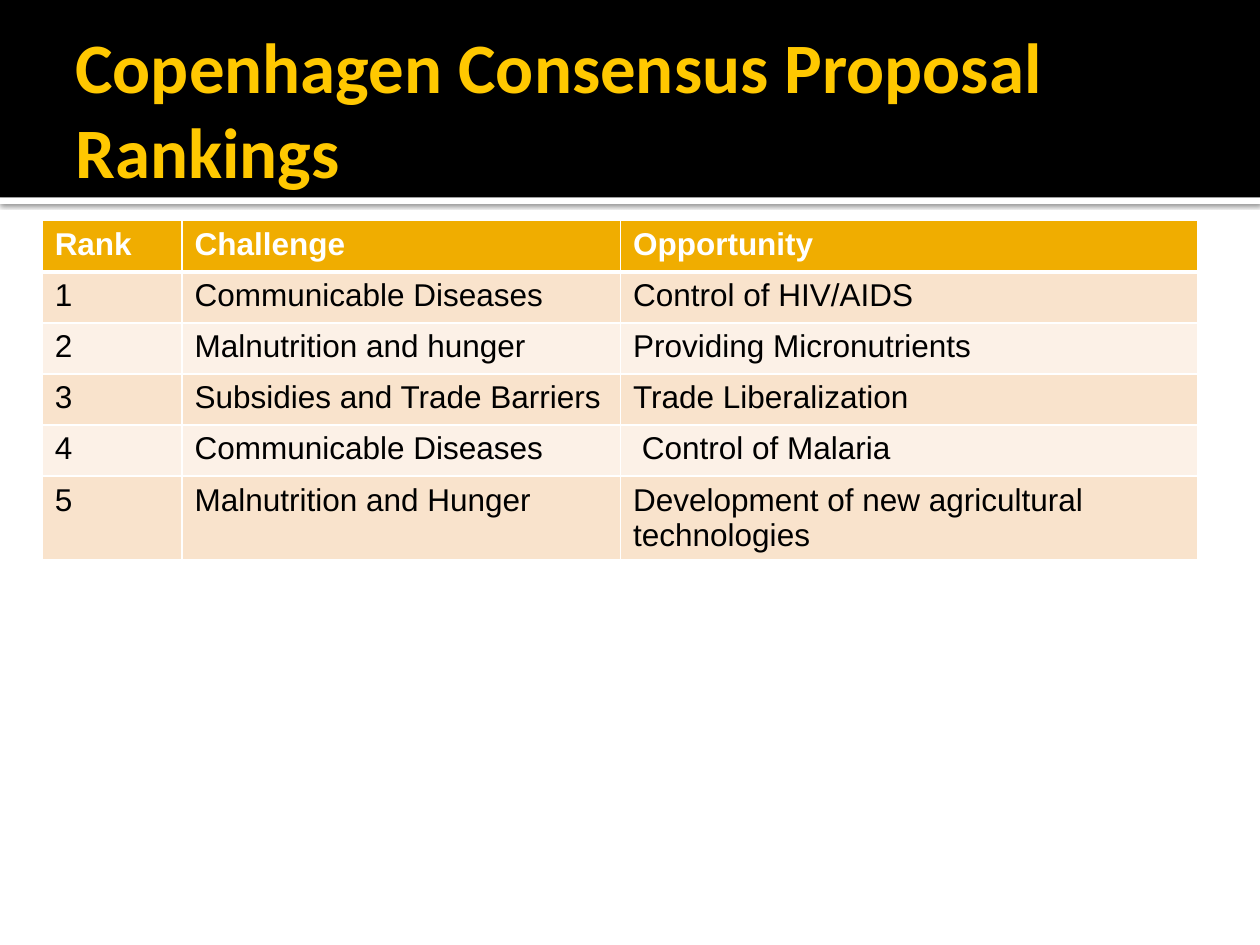
"""Build the slide of Copenhagen Consensus proposal rankings."""
from lxml import etree
from pptx import Presentation
from pptx.dml.color import RGBColor
from pptx.enum import shapes, text
from pptx.oxml import ns
from pptx.util import Cm, Pt

COLORS = {
    "white": "FFFFFF",
    "black": "000000",
    "title": "FFC800",
    "header": "F0AD00",
    "odd": "F9E3CC",
    "even": "FCF1E7",
}
COLUMN_WIDTHS = (2.82, 8.84, 11.63)
ROW_HEIGHT = 1.03
ROWS = (
    ("Rank", "Challenge", "Opportunity"),
    ("1", "Communicable Diseases", "Control of HIV/AIDS"),
    ("2", "Malnutrition and hunger", "Providing Micronutrients"),
    ("3", "Subsidies and Trade Barriers", "Trade Liberalization"),
    ("4", "Communicable Diseases", " Control of Malaria"),
    ("5", "Malnutrition and Hunger", "Development of new agricultural technologies"),
)


def color(name):
    """Return the named colour."""
    return RGBColor.from_string(COLORS[name])


def add_run(paragraph, words, font_name, size, color_name, bold):
    """Add one formatted run to a paragraph."""
    run = paragraph.add_run()
    run.text = words
    run.font.name = font_name
    run.font.size = Pt(size)
    run.font.bold = bold
    run.font.color.rgb = color(color_name)


def add_band(slide, top, height, color_name):
    """Add a full-width band behind the title."""
    shape = slide.shapes.add_shape(
        shapes.MSO_SHAPE.RECTANGLE, 0, Cm(top), Cm(25.4), Cm(height))
    shape.shadow.inherit = False
    shape.fill.solid()
    shape.fill.fore_color.rgb = color(color_name)
    shape.line.fill.background()
    slide.shapes.title.element.addprevious(shape.element)
    return shape


def add_shadow(shape):
    """Give a shape a soft shadow straight below it."""
    effects = shape.element.spPr.find(ns.qn("a:effectLst"))
    shadow = etree.SubElement(
        effects, ns.qn("a:outerShdw"), blurRad=str(Pt(2.5)), dist=str(Pt(0.8)),
        dir="5400000", algn="t", rotWithShape="0")
    tint = etree.SubElement(shadow, ns.qn("a:srgbClr"), val=COLORS["black"])
    etree.SubElement(tint, ns.qn("a:alpha"), val="60000")


def format_title(slide, words):
    """Place the title placeholder and fill in its text."""
    title = slide.shapes.title
    title.left, title.top, title.width, title.height = Cm(1.27), Cm(0.43), Cm(22.86), Cm(3.48)
    frame = title.text_frame
    frame.word_wrap = True
    frame.auto_size = text.MSO_AUTO_SIZE.NONE
    frame.vertical_anchor = text.MSO_ANCHOR.MIDDLE
    frame.margin_left = Cm(0.25)
    frame.margin_right = frame.margin_top = frame.margin_bottom = Cm(0.13)
    paragraph = frame.paragraphs[0]
    paragraph.alignment = text.PP_ALIGN.LEFT
    add_run(paragraph, words, "Calibri", 40.5, "title", True)


def set_borders(cell, widths):
    """Draw white borders of the given widths on the sides of a cell."""
    properties = cell._tc.get_or_add_tcPr()
    for position, (side, width) in enumerate(widths.items()):
        line = etree.Element(ns.qn(f"a:ln{side}"), w=str(Pt(width)))
        fill = etree.SubElement(line, ns.qn("a:solidFill"))
        etree.SubElement(fill, ns.qn("a:srgbClr"), val=COLORS["white"])
        properties.insert(position, line)


def add_rankings(slide):
    """Add the table of ranked proposals."""
    table = slide.shapes.add_table(
        len(ROWS), len(COLUMN_WIDTHS), Cm(0.85), Cm(4.45),
        Cm(sum(COLUMN_WIDTHS)), Cm(ROW_HEIGHT * len(ROWS))).table
    for column, width in zip(table.columns, COLUMN_WIDTHS):
        column.width = Cm(width)
    for index, values in enumerate(ROWS):
        table.rows[index].height = Cm(ROW_HEIGHT)
        header = index == 0
        fill_name = "header" if header else "odd" if index % 2 else "even"
        top = 3 if index == 1 else 1
        bottom = 3 if header else 1
        for cell, value in zip(table.rows[index].cells, values):
            cell.fill.solid()
            cell.fill.fore_color.rgb = color(fill_name)
            set_borders(cell, {"L": 1, "R": 1, "T": top, "B": bottom})
            add_run(cell.text_frame.paragraphs[0], value, "Arial", 18,
                    "white" if header else "black", header)


def main():
    """Build and save the presentation."""
    presentation = Presentation()
    presentation.slide_width, presentation.slide_height = Cm(25.4), Cm(19.05)
    slide = presentation.slides.add_slide(presentation.slide_layouts[5])
    add_shadow(add_band(slide, 3.98, 0.13, "white"))
    add_band(slide, 0, 3.98, "black")
    format_title(slide, "Copenhagen Consensus Proposal Rankings")
    add_rankings(slide)
    presentation.save("out.pptx")


if __name__ == "__main__":
    main()
